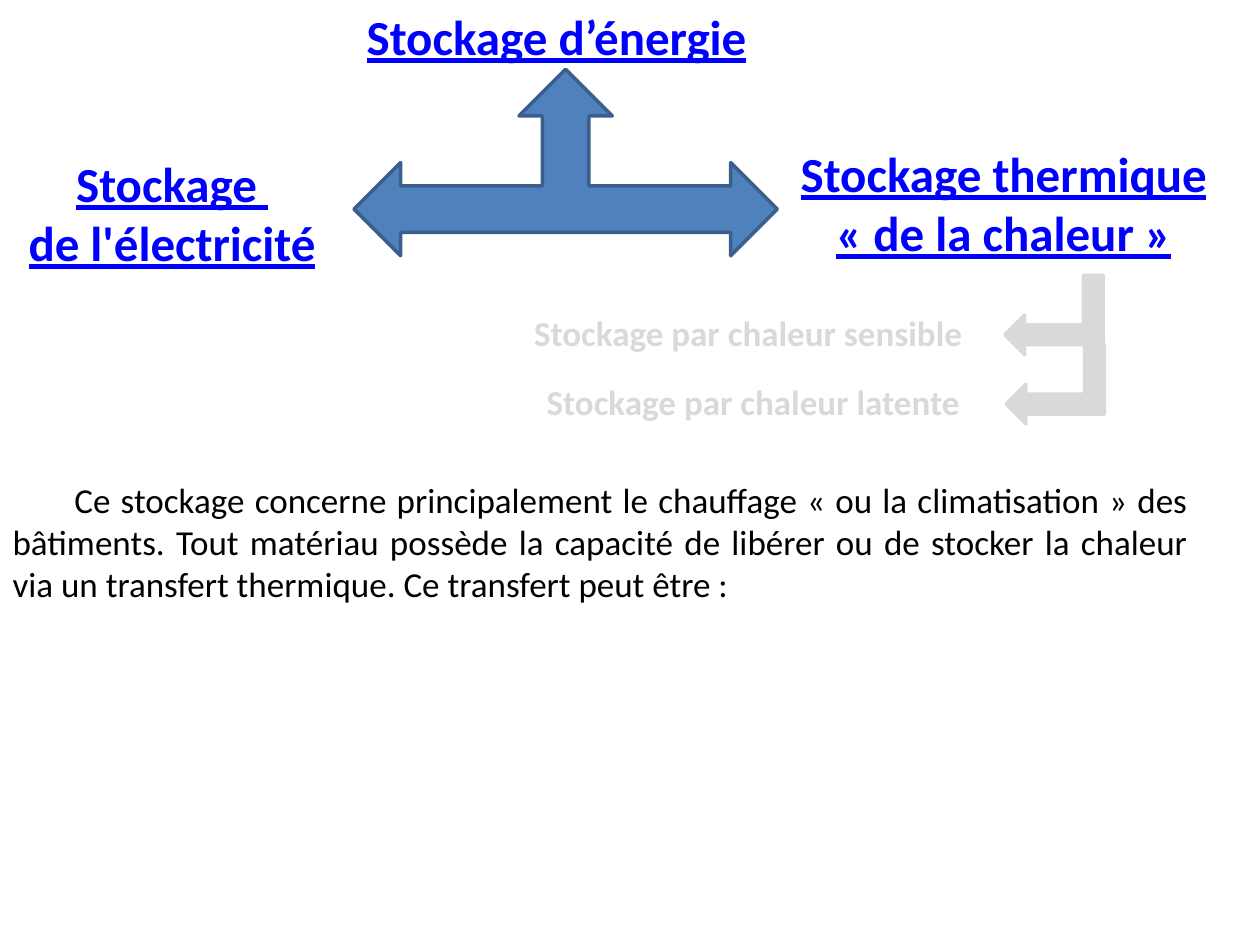
"""Build a slide on the kinds of energy storage, with thermal storage introduced."""
from dataclasses import dataclass

from pptx import Presentation
from pptx import util as u
from pptx.dml.color import RGBColor
from pptx.enum import shapes, text
from pptx.oxml.ns import qn
from pptx.oxml.xmlchemy import OxmlElement

SHAPE = shapes.MSO_SHAPE
ALIGN = text.PP_ALIGN


@dataclass(frozen=True)
class Theme:
    font: str = "Calibri"
    heading: str = "0000FF"
    body: str = "000000"
    muted: str = "D9D9D9"
    arrow: str = "4F81BD"
    arrow_line: str = "3A5F8C"
    heading_size: int = 28
    body_size: int = 20
    line_width: int = 2


THEME = Theme()


def place(item, area):
    item.left, item.top, item.width, item.height = map(u.Inches, area)


def write(box, lines, color, size, align=ALIGN.LEFT, bold=True, underline=False):
    frame = box.text_frame
    frame.word_wrap = True
    frame.auto_size = text.MSO_AUTO_SIZE.SHAPE_TO_FIT_TEXT
    frame.vertical_anchor = text.MSO_ANCHOR.TOP
    frame.text = "\n".join(lines)
    for para in frame.paragraphs:
        para.alignment = align
        para.space_before = u.Pt(0)
        font = para.font
        font.name, font.size = THEME.font, u.Pt(size)
        font.bold, font.underline = bold, underline
        font.color.rgb = RGBColor.from_string(color)


def write_heading(box, lines, align=ALIGN.CENTER):
    write(box, lines, THEME.heading, THEME.heading_size, align, underline=True)


def add_box(page, area):
    return page.shapes.add_textbox(*map(u.Inches, area))


def add_arrow(page, kind, area, fill, line):
    arrow = page.shapes.add_shape(kind, *map(u.Inches, area))
    arrow.shadow.inherit = False
    arrow.fill.solid()
    arrow.fill.fore_color.rgb = RGBColor.from_string(fill)
    arrow.line.color.rgb = RGBColor.from_string(line)
    arrow.line.width = u.Pt(THEME.line_width)
    return arrow


def add_branch(page, label, label_area, arrow_left, arrow_top):
    area = (arrow_left, arrow_top, 0.63, 0.78)
    arrow = add_arrow(page, SHAPE.BENT_UP_ARROW, area, THEME.muted, THEME.muted)
    arrow.rotation = 90
    arrow.element.spPr.find(qn("a:xfrm")).set("flipV", "1")
    write(add_box(page, label_area), [label], THEME.muted, THEME.body_size)


def write_body(box, content):
    write(box, [content], THEME.body, THEME.body_size, ALIGN.JUSTIFY, bold=False)
    properties = box.text_frame.paragraphs[0]._p.get_or_add_pPr()
    properties.set("marL", "0")
    properties.set("indent", str(u.Inches(0.49)))
    properties.find(qn("a:defRPr")).addprevious(OxmlElement("a:buNone"))


def main():
    deck = Presentation()
    deck.slide_width, deck.slide_height = u.Inches(10), u.Inches(7.5)
    page = deck.slides.add_slide(deck.slide_layouts[1])

    title, body = page.placeholders
    place(title, (2.81, 0, 3.28, 0.57))
    write_heading(title, ["Stockage d’énergie"], ALIGN.LEFT)
    place(body, (0, 3.75, 9.53, 1.11))
    write_body(
        body,
        "Ce stockage concerne principalement le chauffage « ou la climatisation » des "
        "bâtiments. Tout matériau possède la capacité de libérer ou de stocker la chaleur "
        "via un transfert thermique. Ce transfert peut être :",
    )

    add_arrow(page, SHAPE.LEFT_RIGHT_UP_ARROW, (2.81, 0.55, 3.36, 1.48),
              THEME.arrow, THEME.arrow_line)
    write_heading(add_box(page, (-0.08, 1.17, 2.89, 1.04)),
                  ["Stockage ", "de l'électricité"])
    write_heading(add_box(page, (6.17, 1.09, 3.59, 1.04)),
                  ["Stockage thermique « de la chaleur »"])

    add_branch(page, "Stockage par chaleur sensible", (4.14, 2.42, 4.14, 0.44), 8.05, 2.11)
    add_branch(page, "Stockage par chaleur latente", (4.24, 2.97, 3.67, 0.44), 8.06, 2.66)
    deck.save("out.pptx")


if __name__ == "__main__":
    main()
